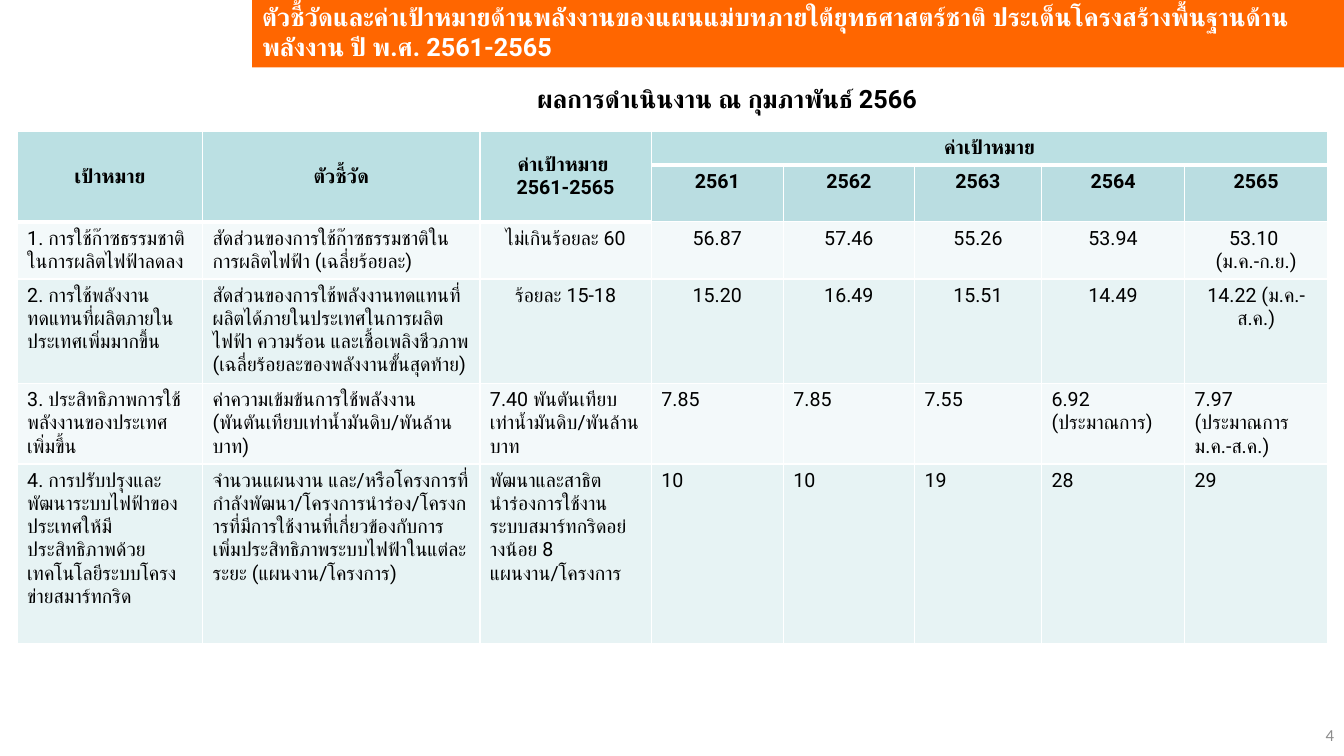
from dataclasses import dataclass

from lxml import etree
from pptx import Presentation
from pptx import util as u
from pptx.dml.color import RGBColor
from pptx.enum import text
from pptx.oxml.ns import qn


@dataclass(frozen=True)
class Theme:
    font: str = "Roboto"
    number_font: str = "Calibri"
    banner: str = "FF6600"
    white: str = "FFFFFF"
    black: str = "000000"
    grey: str = "8C8C8C"
    header: str = "BBE0E3"
    years: str = "BADDE1"
    bands: tuple = ("F3F9FA", "E7F3F4")
    heading_size: int = 18
    table_size: int = 14
    number_size: int = 12


LEFT, CENTER, RIGHT = text.PP_ALIGN.LEFT, text.PP_ALIGN.CENTER, text.PP_ALIGN.RIGHT
TOP, MIDDLE = text.MSO_ANCHOR.TOP, text.MSO_ANCHOR.MIDDLE


def write(frame, words, *, size, color, font, bold=False, align=LEFT, anchor=TOP):
    """Fill a text frame: \\n starts a paragraph, \\v breaks a line."""
    frame.word_wrap = True
    for index, line in enumerate(words.split("\n")):
        para = frame.paragraphs[0] if index == 0 else frame.add_paragraph()
        para.text = line
        para.alignment = align
        for span in para.runs:
            span.font.size = u.Pt(size)
            span.font.bold = bold
            span.font.name = font
            span.font.color.rgb = RGBColor.from_string(color)
            # Thai letters take the complex-script font
            etree.SubElement(span.font._element, qn("a:cs"), typeface=font)
    frame.vertical_anchor = anchor


class Slide:
    def __init__(self, deck, theme):
        self.theme = theme
        self.page = deck.slides.add_slide(deck.slide_layouts[5])

    def place(self, box, left, top, width, height):
        box.left, box.top = u.Inches(left), u.Inches(top)
        box.width, box.height = u.Inches(width), u.Inches(height)

    def banner(self, words, *area):
        box = self.page.shapes.title
        self.place(box, *area)
        box.fill.solid()
        box.fill.fore_color.rgb = RGBColor.from_string(self.theme.banner)
        box.text_frame.auto_size = text.MSO_AUTO_SIZE.NONE
        write(box.text_frame, words, size=self.theme.heading_size, bold=True,
              color=self.theme.white, font=self.theme.font, anchor=MIDDLE)

    def label(self, words, *area, **style):
        box = self.page.shapes.add_textbox(*map(u.Inches, area))
        write(box.text_frame, words, **style)

    def table(self, left, top, widths, heights):
        area = map(u.Inches, (left, top, sum(widths), sum(heights)))
        grid = self.page.shapes.add_table(len(heights), len(widths), *area).table
        grid.first_row = grid.horz_banding = False
        for column, width in zip(grid.columns, widths):
            column.width = u.Inches(width)
        for row, height in zip(grid.rows, heights):
            row.height = u.Inches(height)
        return grid

    def cell(self, cell, words, fill, thick=False, **style):
        self.borders(cell, bottom=3 if thick else 1)
        cell.fill.solid()
        cell.fill.fore_color.rgb = RGBColor.from_string(fill)
        anchor = style.pop("anchor", TOP)
        write(cell.text_frame, words, size=self.theme.table_size,
              color=self.theme.black, font=self.theme.font, **style)
        cell.vertical_anchor = anchor

    def borders(self, cell, bottom):
        properties = cell._tc.get_or_add_tcPr()
        for side, width in (("L", 1), ("R", 1), ("T", 1), ("B", bottom)):
            line = etree.SubElement(properties, qn("a:ln" + side), w=str(u.Pt(width)))
            paint = etree.SubElement(line, qn("a:solidFill"))
            etree.SubElement(paint, qn("a:srgbClr"), val=self.theme.white)


WIDTHS = (1.84, 2.75, 1.7, 1.31, 1.3, 1.26, 1.42, 1.42)
HEIGHTS = (0.33, 0.53, 0.56, 1.02, 0.79, 1.78)
HEADER = (
    ("เป้าหมาย", "ตัวชี้วัด", "ค่าเป้าหมาย \n2561-2565", "ค่าเป้าหมาย", "", "", "", ""),
    ("", "", "", "2561", "2562", "2563", "2564", "2565"),
)
GOALS = (
    ("1. การใช้ก๊าซธรรมชาติในการผลิตไฟฟ้าลดลง",
     "สัดส่วนของการใช้ก๊าซธรรมชาติในการผลิตไฟฟ้า (เฉลี่ยร้อยละ)",
     "ไม่เกินร้อยละ 60",
     "56.87", "57.46", "55.26", "53.94", "53.10 \v(ม.ค.-ก.ย.)"),
    ("2. การใช้พลังงานทดแทนที่ผลิตภายในประเทศเพิ่มมากขึ้น",
     "สัดส่วนของการใช้พลังงานทดแทนที่ผลิตได้ภายในประเทศในการผลิตไฟฟ้า ความร้อน "
     "และเชื้อเพลิงชีวภาพ (เฉลี่ยร้อยละของพลังงานขั้นสุดท้าย)",
     "ร้อยละ 15-18",
     "15.20", "16.49", "15.51", "14.49", "14.22 (ม.ค.-ส.ค.)"),
    ("3. ประสิทธิภาพการใช้พลังงานของประเทศเพิ่มขึ้น",
     "ค่าความเข้มข้นการใช้พลังงาน (พันตันเทียบเท่าน้ำมันดิบ/พันล้านบาท)",
     "7.40 พันตันเทียบเท่าน้ำมันดิบ/พันล้านบาท",
     "7.85", "7.85", "7.55", "6.92\n(ประมาณการ)", "7.97\n(ประมาณการ ม.ค.-ส.ค.)"),
    ("4. การปรับปรุงและพัฒนาระบบไฟฟ้าของประเทศให้มีประสิทธิภาพด้วยเทคโนโลยีระบบโครงข่ายสมาร์ทกริด",
     "จำนวนแผนงาน และ/หรือโครงการที่กำลังพัฒนา/โครงการนำร่อง/โครงการที่มีการใช้งาน"
     "ที่เกี่ยวข้องกับการเพิ่มประสิทธิภาพระบบไฟฟ้าในแต่ละระยะ (แผนงาน/โครงการ)",
     "พัฒนาและสาธิตนำร่องการใช้งานระบบสมาร์ทกริดอย่างน้อย 8 แผนงาน/โครงการ",
     "10", "10", "19", "28", "29"),
)


def main():
    deck = Presentation()
    deck.slide_width, deck.slide_height = u.Inches(13.33), u.Inches(7.5)
    theme = Theme()
    slide = Slide(deck, theme)

    # Headings
    slide.banner("ตัวชี้วัดและค่าเป้าหมายด้านพลังงานของแผนแม่บทภายใต้ยุทธศาสตร์ชาติ "
                 "ประเด็นโครงสร้างพื้นฐานด้านพลังงาน ปี พ.ศ. 2561-2565",
                 2.5, -0.04, 10.83, 0.71)
    slide.label("ผลการดำเนินงาน ณ กุมภาพันธ์ 2566", 4.75, 0.78, 4.92, 0.4,
                size=theme.heading_size, color=theme.black, font=theme.font,
                bold=True, align=CENTER)

    # Table header: three tall cells, then one wide cell over the years
    grid = slide.table(0.17, 1.3, WIDTHS, HEIGHTS)
    for column in range(3):
        grid.cell(0, column).merge(grid.cell(1, column))
    grid.cell(0, 3).merge(grid.cell(0, 7))
    for row, names in enumerate(HEADER):
        for column, name in enumerate(names):
            tall = column < 3
            slide.cell(grid.cell(row, column), name,
                       theme.header if tall or row == 0 else theme.years,
                       thick=tall or row == 0, bold=True, align=CENTER,
                       anchor=MIDDLE if tall else TOP)

    # Goals: the figures of the first two are centred
    for index, goal in enumerate(GOALS):
        for column, words in enumerate(goal):
            centred = index < 2 and column >= 2
            slide.cell(grid.cell(index + 2, column), words, theme.bands[index % 2],
                       align=CENTER if centred else LEFT)

    # Page number
    slide.label("4", 10.33, 7.09, 3, 0.4, size=theme.number_size, color=theme.grey,
                font=theme.number_font, align=RIGHT, anchor=MIDDLE)

    deck.save("out.pptx")


if __name__ == "__main__":
    main()
